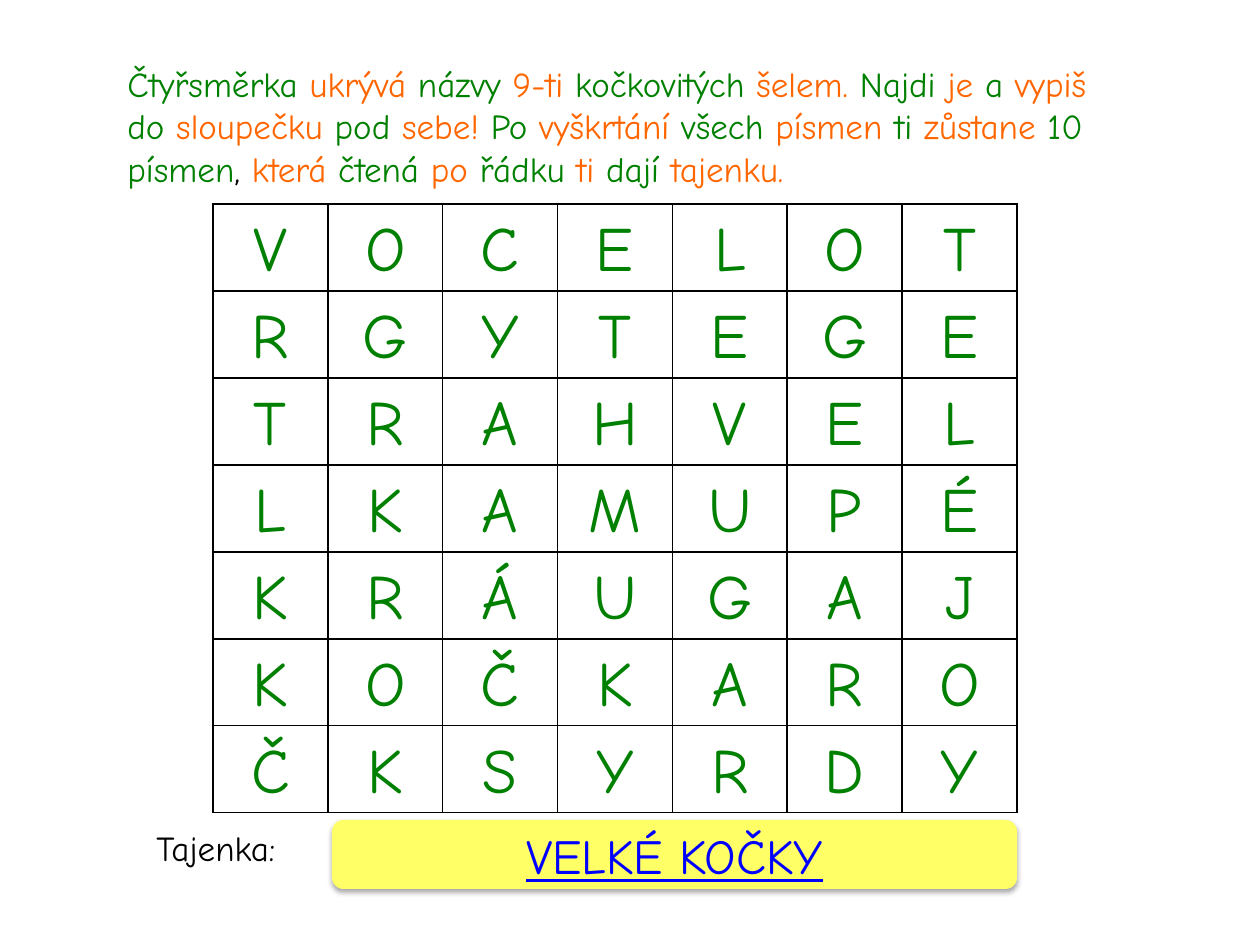
from itertools import cycle

from pptx import Presentation
from pptx.dml.color import RGBColor
from pptx.enum.shapes import MSO_SHAPE
from pptx.enum.text import MSO_ANCHOR, PP_ALIGN
from pptx.oxml import parse_xml
from pptx.oxml.ns import nsdecls
from pptx.util import Pt

CENTER, MIDDLE = PP_ALIGN.CENTER, MSO_ANCHOR.MIDDLE
ROUNDED = MSO_SHAPE.ROUNDED_RECTANGLE
FONT = "Comic Neue"
GREEN, ORANGE, BLACK, BLUE, YELLOW = "008000", "FF6600", "000000", "0000FF", "FFFF66"
PX = 914400 / 126

INTRO = (
    "Čtyřsměrka |ukrývá |názvy |9-ti |kočkovitých |šelem. |Najdi| je |a |vypiš |"
    "do |sloupečku |pod |sebe! |Po |vyškrtání |všech |písmen |ti |zůstane |"
    "10 písmen|, |která |čtená |po |řádku |ti |dají |tajenku."
)
GRID = ["VOCELOT", "RGYTEGE", "TRAHVEL", "LKAMUPÉ", "KRÁUGAJ", "KOČKARO", "ČKSYRDY"]


def px(*values):
    """Turn pixel lengths into EMU."""
    return [round(v * PX) for v in values]


def style(p, size, color=None, align=None):
    p.font.name, p.font.size, p.alignment = FONT, Pt(size), align
    if color:
        p.font.color.rgb = RGBColor.from_string(color)


prs = Presentation()
prs.slide_width, prs.slide_height = px(1260, 945)
s = prs.slides.add_slide(prs.slide_layouts[6])

# Instructions in alternating colours
tf = s.shapes.add_textbox(*px(115, 56, 1032, 140)).text_frame
tf.word_wrap = True
tf.vertical_anchor = MIDDLE
p = tf.paragraphs[0]
style(p, 20)
colors = cycle([GREEN, ORANGE])
for part in INTRO.split("|"):
    r = p.add_run()
    r.text = part
    r.font.color.rgb = RGBColor.from_string(BLACK if part == ", " else next(colors))

# Letter grid
n = len(GRID)
table = s.shapes.add_table(n, n, *px(213, 204, 804, 609)).table
table.first_row = table.horz_banding = False
for row in table.rows:
    row.height = px(87)[0]
for i, word in enumerate(GRID):
    for j, letter in enumerate(word):
        cell = table.cell(i, j)
        cell.margin_left = cell.margin_right = px(9)[0]
        cell.margin_top = cell.margin_bottom = 0
        cell.text = letter
        p = cell.text_frame.paragraphs[0]
        p.line_spacing = 1.15
        style(p, 36, GREEN, CENTER)
        tcPr = cell._tc.get_or_add_tcPr()
        for side in "LRTB":
            tcPr.append(parse_xml(
                f'<a:ln{side} {nsdecls("a")} w="12700"><a:solidFill>'
                f'<a:srgbClr val="{BLACK}"/></a:solidFill></a:ln{side}>'))
        cell.fill.background()

# Solution
tf = s.shapes.add_textbox(*px(144, 820, 179, 55)).text_frame
tf.word_wrap = False
p = tf.paragraphs[0]
p.text = "Tajenka:"
style(p, 20, BLACK)

sp = s.shapes.add_shape(ROUNDED, *px(332, 820, 685, 69))
sp.fill.solid()
sp.fill.fore_color.rgb = RGBColor.from_string(YELLOW)
sp.line.fill.background()
sp.shadow.inherit = False
sp._element.spPr.find("{*}effectLst").append(parse_xml(
    f'<a:outerShdw {nsdecls("a")} blurRad="40000" dist="23000" dir="5400000" rotWithShape="0">'
    f'<a:srgbClr val="{BLACK}"><a:alpha val="35000"/></a:srgbClr></a:outerShdw>'))
tf = sp.text_frame
tf.vertical_anchor = MIDDLE
p = tf.paragraphs[0]
p.text = "VELKÉ KOČKY"
style(p, 28, BLUE, CENTER)
p.font.underline = True

prs.save("out.pptx")
